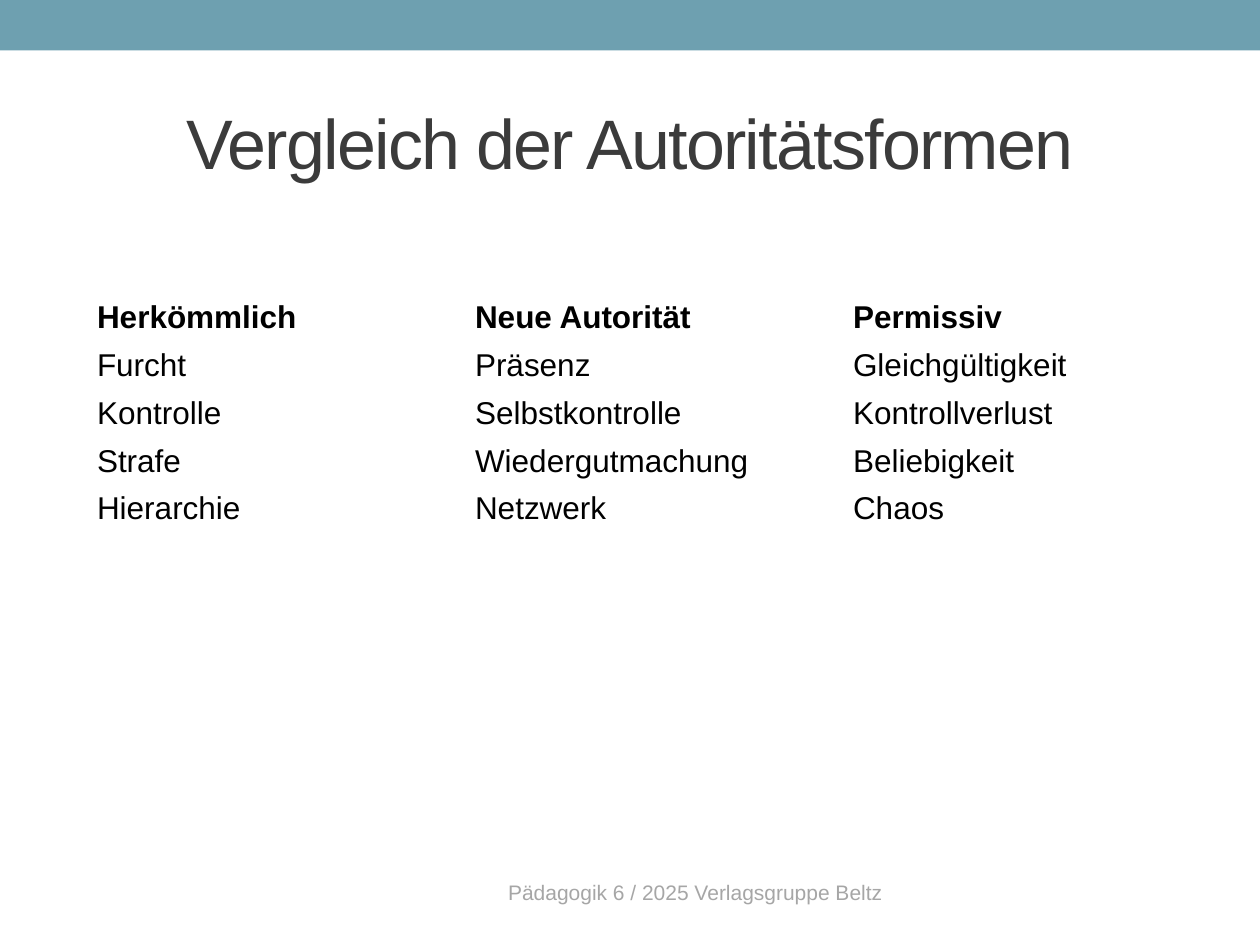
from dataclasses import dataclass

from pptx import Presentation
from pptx.dml.color import RGBColor
from pptx.enum.shapes import MSO_SHAPE
from pptx.enum.text import MSO_ANCHOR, PP_ALIGN
from pptx.util import Inches, Pt


@dataclass(frozen=True)
class Theme:
    """Colours, font and type sizes of the slide."""
    font: str = "Arial"
    band: str = "6EA0B0"
    title: str = "3B3B3B"
    body: str = "000000"
    footer: str = "A6A6A6"
    title_size: int = 40
    body_size: int = 18
    footer_size: int = 12
    title_spacing: int = -100


THEME = Theme()
AUTHORITY_FORMS = {
    "Herkömmlich": ["Furcht", "Kontrolle", "Strafe", "Hierarchie"],
    "Neue Autorität": ["Präsenz", "Selbstkontrolle", "Wiedergutmachung", "Netzwerk"],
    "Permissiv": ["Gleichgültigkeit", "Kontrollverlust", "Beliebigkeit", "Chaos"],
}


def add_text(frame, text, size, color, align=PP_ALIGN.LEFT, bold=False):
    """Write one formatted run into the first paragraph and return it."""
    frame.word_wrap = True
    paragraph = frame.paragraphs[0]
    paragraph.alignment = align
    run = paragraph.add_run()
    run.text = text
    run.font.name = THEME.font
    run.font.size = Pt(size)
    run.font.bold = bold
    run.font.color.rgb = RGBColor.from_string(color)
    return run


def add_band(slide, left, top, width, height):
    """Draw the coloured band."""
    band = slide.shapes.add_shape(MSO_SHAPE.RECTANGLE, left, top, width, height)
    band.shadow.inherit = False
    band.fill.solid()
    band.fill.fore_color.rgb = RGBColor.from_string(THEME.band)
    band.line.fill.background()


def place_title(slide, text, left, top, width, height):
    """Move and format the title placeholder."""
    title = slide.shapes.title
    title.left, title.top, title.width, title.height = left, top, width, height
    title.text_frame.vertical_anchor = MSO_ANCHOR.MIDDLE
    run = add_text(title.text_frame, text, THEME.title_size, THEME.title, PP_ALIGN.CENTER)
    run.font._element.set("spc", str(THEME.title_spacing))


def add_comparison(slide, columns, left, top, width, height):
    """Add an unfilled table with one column for each form of authority."""
    rows = list(zip(*([heading, *entries] for heading, entries in columns.items())))
    table = slide.shapes.add_table(len(rows), len(columns), left, top, width, height).table
    table.first_row = False
    table.horz_banding = False
    for row_index, row in enumerate(rows):
        for column_index, text in enumerate(row):
            cell = table.cell(row_index, column_index)
            cell.fill.background()
            cell.vertical_anchor = MSO_ANCHOR.MIDDLE
            cell.margin_top = cell.margin_bottom = Inches(0.04)
            add_text(cell.text_frame, text, THEME.body_size, THEME.body, bold=row_index == 0)


def add_footer(slide, text, left, top, width, height):
    """Add the centred source line."""
    frame = slide.shapes.add_textbox(left, top, width, height).text_frame
    frame.vertical_anchor = MSO_ANCHOR.MIDDLE
    add_text(frame, text, THEME.footer_size, THEME.footer, PP_ALIGN.CENTER)


def main():
    """Build and save the slide."""
    presentation = Presentation()
    presentation.slide_width, presentation.slide_height = Inches(10), Inches(7.5)
    slide = presentation.slides.add_slide(presentation.slide_layouts[5])
    add_band(slide, 0, 0, presentation.slide_width, Inches(0.4))
    place_title(slide, "Vergleich der Autoritätsformen",
                Inches(0.5), Inches(0.58), Inches(9), Inches(1.08))
    add_comparison(slide, AUTHORITY_FORMS, Inches(0.67), Inches(2.33), Inches(9), Inches(1.9))
    add_footer(slide, "Pädagogik 6 / 2025 Verlagsgruppe Beltz",
               Inches(3.27), Inches(6.9), Inches(4.5), Inches(0.36))
    presentation.save("out.pptx")


if __name__ == "__main__":
    main()
